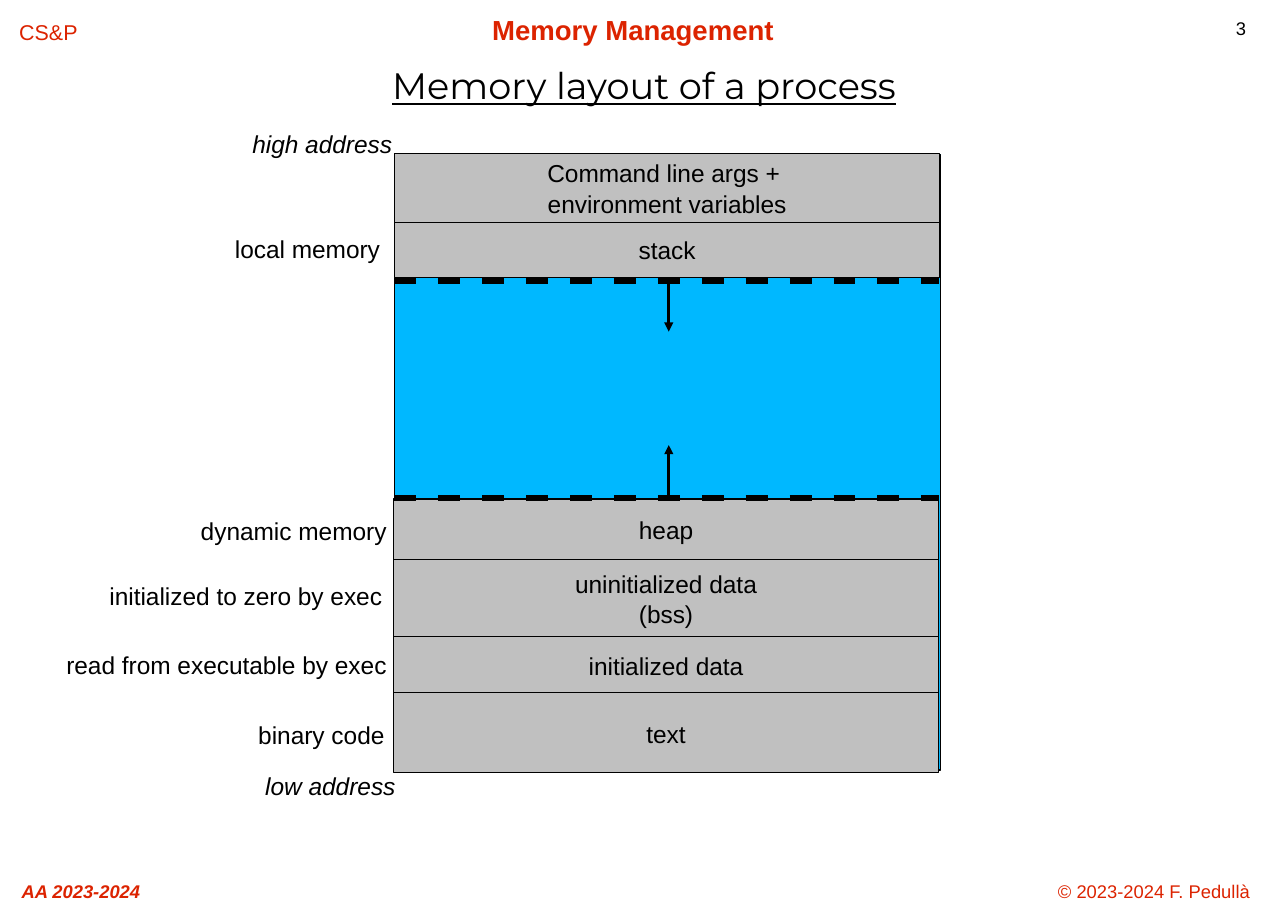
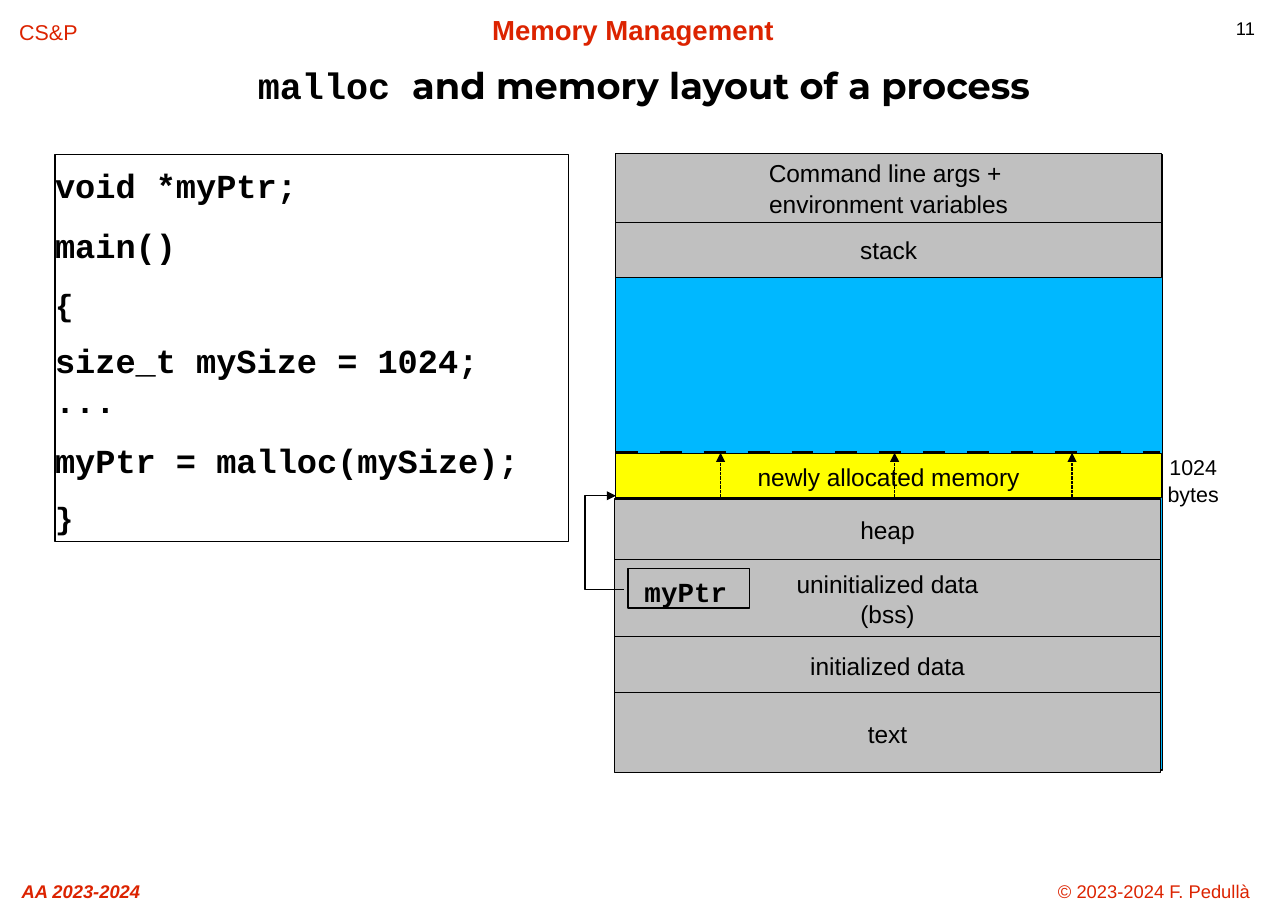
from lxml import etree
from pptx import Presentation
from pptx import util as u
from pptx.dml.color import RGBColor
from pptx.enum import shapes, text
from pptx.oxml import ns

COLORS = {"ink": "000000", "red": "DC2300", "gray": "C0C0C0",
          "blue": "00B8FF", "yellow": "FFFF00"}
SANS, MONO, HEAD = "Arial", "Courier New", "Montserrat"
LEFT, CENTER, RIGHT = text.PP_ALIGN.LEFT, text.PP_ALIGN.CENTER, text.PP_ALIGN.RIGHT
TOP, MIDDLE = text.MSO_ANCHOR.TOP, text.MSO_ANCHOR.MIDDLE
BAR_WIDTH = 4.95
UPPER_BARS = [(2, 0.52, "stack"),
              (1.39, 0.63, "Command line args + \venvironment variables")]
LOWER_BARS = [(4.53, 0.55, "heap"), (5.08, 0.7, "uninitialized data\n(bss)"),
              (5.78, 0.51, "initialized data"), (6.29, 0.72, "text")]


class Deck:
    """Hold the shared style and the current slide."""

    def __init__(self):
        self.prs = Presentation()
        self.prs.slide_width = u.Inches(11.69)
        self.prs.slide_height = u.Inches(8.27)
        self.s = None

    def color(self, name):
        return RGBColor.from_string(COLORS[name])

    def font(self, font, size, name=SANS, color="ink", bold=False, italic=False):
        font.size, font.name = u.Pt(size), name
        font.bold, font.italic = bold, italic
        font.color.rgb = self.color(color)

    def frame(self, sp, insets=(0, 0, 0, 0), anchor=TOP, wrap=True):
        tf = sp.text_frame
        tf.word_wrap, tf.auto_size = wrap, text.MSO_AUTO_SIZE.NONE
        tf.vertical_anchor = anchor
        tf.margin_left, tf.margin_top, tf.margin_right, tf.margin_bottom = map(u.Inches, insets)
        return tf

    def fill_text(self, tf, content, size, align=LEFT, spacing=1.05, **style):
        for i, line in enumerate(content.split("\n")):
            p = tf.add_paragraph() if i else tf.paragraphs[0]
            p.text, p.alignment, p.line_spacing = line, align, spacing
            self.font(p.font, size, **style)

    def label(self, box, content, size, align=LEFT, insets=(0, 0, 0, 0),
              wrap=True, spacing=1.05, **style):
        sp = self.s.shapes.add_textbox(*map(u.Inches, box))
        self.fill_text(self.frame(sp, insets, wrap=wrap), content, size, align, spacing, **style)

    def outline(self, sp, fill=None):
        sp.shadow.inherit = False
        if fill:
            sp.fill.solid()
            sp.fill.fore_color.rgb = self.color(fill)
        else:
            sp.fill.background()
        sp.line.color.rgb = self.color("ink")
        sp.line.width = u.Pt(0)

    def box(self, box, fill=None):
        sp = self.s.shapes.add_shape(shapes.MSO_SHAPE.RECTANGLE, *map(u.Inches, box))
        self.outline(sp, fill)
        return sp

    def bar(self, left, top, height, content, fill="gray"):
        sp = self.box((left, top, BAR_WIDTH, height), fill)
        self.fill_text(self.frame(sp, anchor=MIDDLE), content, 16, CENTER)

    def arrowhead(self, sp):
        etree.SubElement(sp.line._get_or_add_ln(), ns.qn("a:tailEnd"), type="triangle")

    def line(self, x1, y1, x2, y2, width=0):
        c = self.s.shapes.add_connector(shapes.MSO_CONNECTOR.STRAIGHT,
                                        *map(u.Inches, (x1, y1, x2, y2)))
        c.line.color.rgb = self.color("ink")
        c.line.width = u.Pt(width)
        etree.SubElement(c._element.spPr, ns.qn("a:effectLst"))
        return c

    def arrow(self, x, y1, y2, dashed=False):
        c = self.line(x, y1, x, y2, 0.75 if dashed else 0)
        if dashed:
            etree.SubElement(c.line._get_or_add_ln(), ns.qn("a:prstDash"), val="sysDash")
        self.arrowhead(c)

    def boundary(self, left, y):
        c = self.line(left, y, left + 4.94, y, 4.31)
        dash = etree.SubElement(c.line._get_or_add_ln(), ns.qn("a:custDash"))
        etree.SubElement(dash, ns.qn("a:ds"), d="333000", sp="333000")

    def elbow(self, points):
        emu = [(u.Inches(x), u.Inches(y)) for x, y in points]
        builder = self.s.shapes.build_freeform(*emu[0], scale=1.0)
        builder.add_line_segments(emu[1:], close=False)
        sp = builder.convert_to_shape()
        self.outline(sp)
        self.arrowhead(sp)

    def slide(self, number, runs, bold=False, underline=False):
        self.s = self.prs.slides.add_slide(self.prs.slide_layouts[5])
        sp = self.s.shapes.title
        sp.left, sp.top, sp.width, sp.height = map(u.Inches, (1.9, 0.49, 7.89, 0.63))
        p = self.frame(sp, (0.1, 0.05, 0.1, 0.05), MIDDLE).paragraphs[0]
        p.alignment, p.line_spacing = CENTER, 0.85
        for content, name in runs:
            r = p.add_run()
            r.text = content
            self.font(r.font, 24, name, bold=bold)
            r.font.underline = underline
        for box, content, size, align, style in [
                ((11.12, 0.1, 0.96, 0.35), number, 12, LEFT, {}),
                ((9.26, 7.94, 2.43, 0.33), "© 2023-2024 F. Pedullà", 12, CENTER, {"color": "red"}),
                ((-0.45, 7.94, 2.37, 0.33), "AA 2023-2024", 12, CENTER,
                 {"color": "red", "bold": True, "italic": True}),
                ((4.15, 0.07, 3.19, 0.33), "Memory Management", 18, CENTER,
                 {"color": "red", "bold": True}),
                ((0.06, 0.12, 0.76, 0.33), "CS&P", 14, CENTER, {"color": "red"})]:
            self.label(box, content, size, align, (0.1, 0.05, 0.1, 0.05),
                       wrap=align == CENTER, spacing=1.01, **style)

    def memory_map(self, left):
        self.box((left, 1.4, 4.96, 5.59), "blue")
        for row in LOWER_BARS:
            self.bar(left - 0.01, *row)
        for row in UPPER_BARS:
            self.bar(left, *row)

    def listing(self, box, lines):
        tf = self.frame(self.box(box), (0, 0.08, 0, 0))
        self.fill_text(tf, "\n".join(lines), 22, name=MONO, bold=True)
        for i, p in enumerate(tf.paragraphs):
            p.space_before, p.space_after = u.Pt(5.7 if i else 0), u.Pt(5.7)
            if p.text in ("{", "}"):
                p.font.size = u.Pt(20)
        for p in tf.paragraphs[2:4]:
            p.line_spacing = u.Pt(26.2)


def layout_slide(deck):
    left = 3.58
    deck.slide("3", [("Memory layout of a process", HEAD)], underline=True)
    deck.memory_map(left)
    deck.arrow(6.07, 2.54, 3.01)
    deck.arrow(6.07, 4.51, 4.04)
    for y in (2.55, 4.52):
        deck.boundary(left, y)
    for right, top, content in [
            (3.56, 1.16, "high address"), (3.45, 2.11, "local memory"),
            (3.51, 4.67, "dynamic memory"), (3.47, 5.26, "initialized to zero by exec"),
            (3.51, 5.89, "read from executable by exec"), (3.49, 6.52, "binary code"),
            (3.59, 6.99, "low address")]:
        deck.label((right - 3, top, 3, 0.36), content, 16, RIGHT,
                   italic=content.endswith("address"))


def malloc_slide(deck):
    left = 5.59
    deck.slide("11", [("malloc ", MONO), ("and memory layout of a process", HEAD)], bold=True)
    deck.memory_map(left)
    deck.listing((0.5, 1.4, 4.66, 3.52),
                 ["void *myPtr;", "main()", "{", "size_t mySize = 1024;\v...",
                  "myPtr = malloc(mySize);", "}"])
    pointer = deck.frame(deck.box((5.7, 5.16, 1.1, 0.36)), (0.15, 0, 0, 0))
    deck.fill_text(pointer, "myPtr", 18, spacing=u.Pt(26.2), name=MONO, bold=True)
    deck.boundary(left, 4.12)
    deck.bar(left, 4.12, 0.4, "newly allocated memory", "yellow")
    for x in (6.54, 8.12, 9.73):
        deck.arrow(x, 4.52, 4.11, dashed=True)
    deck.label((10.49, 4.11, 0.68, 0.46), "1024 bytes", 14, CENTER)
    deck.elbow([(5.66, 5.35), (5.31, 5.35), (5.31, 4.5), (left, 4.5)])


def main():
    deck = Deck()
    layout_slide(deck)
    malloc_slide(deck)
    deck.prs.save("out.pptx")


if __name__ == "__main__":
    main()
